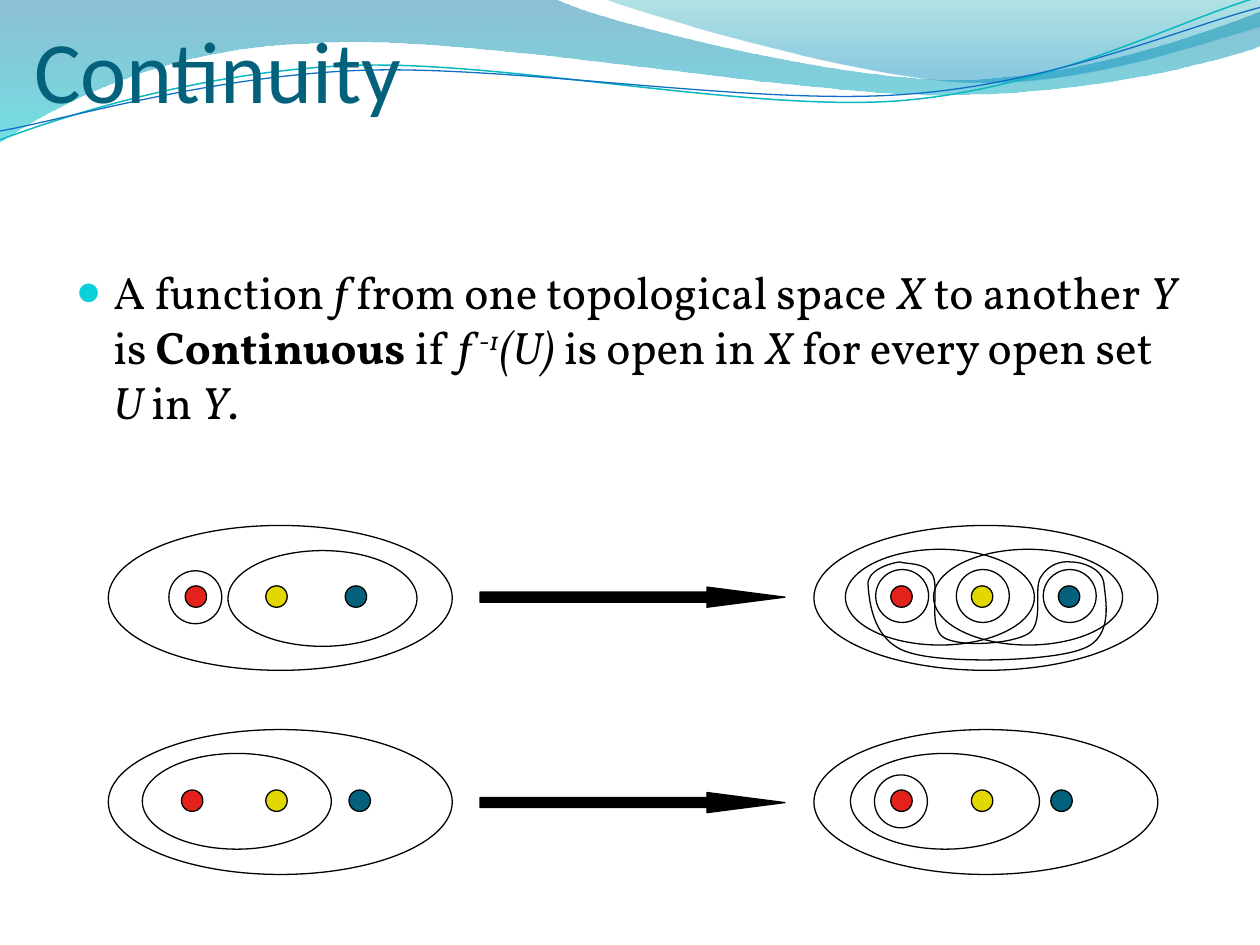
import math
from lxml import etree
from pptx import Presentation
from pptx import util as u
from pptx.dml.color import RGBColor
from pptx.enum import shapes, text
from pptx.oxml.ns import qn

C = {"black": "000000", "title": "04617B", "bullet": "0BD0D9",
     "red": "E3231B", "yellow": "E2D700", "blue": "04617B",
     "cyan_line": "0AB8BF", "blue_line": "0F6FC6",
     "wave_top": "0074A1", "wave_end": "00C6CF",
     "crest_top": "00A1A9", "crest_end": "008BBF"}


def style(sp, fill=None, line="black", width=0.75):
    sp.shadow.inherit = False
    if fill:
        sp.fill.solid()
        sp.fill.fore_color.rgb = RGBColor.from_string(C[fill])
    else:
        sp.fill.background()
    if line:
        sp.line.color.rgb = RGBColor.from_string(C[line])
        sp.line.width = u.Pt(width)
    else:
        sp.line.fill.background()


def curve(parent, points, kinds, close):
    pts = [(u.Inches(x), u.Inches(y)) for x, y in points]
    fb = parent.build_freeform(*pts[0])
    fb.add_line_segments(pts[1:], close=close)
    sp = fb.convert_to_shape()
    lines = iter(list(sp.element.spPr.iter(qn("a:lnTo"))))
    for kind in kinds:
        first = next(lines)
        if kind == "C":
            bez = etree.Element(qn("a:cubicBezTo"))
            first.addprevious(bez)
            for ln in (first, next(lines), next(lines)):
                bez.append(ln[0])
                ln.getparent().remove(ln)
    return sp


prs = Presentation()
prs.slide_width, prs.slide_height = u.Inches(10), u.Inches(7.5)
s = prs.slides.add_slide(prs.slide_layouts[1])

waves = [
    ([(0, 0), (4.4, -0.01), (4.76, 0.17), (6.64, 0.63), (7.58, 0.63),
      (8.53, 0.63), (9.58, 0.26), (10, 0.09), (10.01, 0.36),
      (9.83, 0.44), (8.7, 0.76), (7.46, 0.75), (6.22, 0.75), (3.82, 0.28),
      (2.57, 0.34), (1.29, 0.36), (0.46, 0.83), (-0.01, 1.13)], "LCCLCCC",
     [(0, "wave_top", 45), (1, "wave_end", 55)]),
    ([(4.79, -0.01), (5.09, 0.11), (6.82, 0.62), (7.69, 0.65),
      (8.56, 0.69), (9.61, 0.32), (10, 0.21), (10, 0)], "CCL",
     [(0, "crest_top", 30), (0.8, "crest_end", 45)]),
]
for points, kinds, stops in waves:
    sp = curve(s.shapes, points, kinds, True)
    style(sp, line=None)
    sp.fill.gradient()
    sp.fill.gradient_angle = 270
    for stop, (pos, color, _) in zip(sp.fill.gradient_stops, stops):
        stop.position = pos
        stop.color.rgb = RGBColor.from_string(C[color])
    for clr, (_, _, alpha) in zip(sp.element.spPr.iter(qn("a:srgbClr")), stops):
        etree.SubElement(clr, qn("a:alpha"), val=str(alpha * 1000))

ripples = [
    ([(0, 1.11), (0.48, 0.93), (1.58, 0.57), (2.77, 0.52), (3.95, 0.47),
      (5.93, 0.89), (7.13, 0.8), (8.33, 0.71), (9.38, 0.15), (9.98, -0.02)],
     (4.99, 0.57), "cyan_line", 0.85),
    ([(0, 1.04), (0.47, 0.96), (1.64, 0.61), (2.83, 0.56), (4.03, 0.51),
      (5.97, 0.84), (7.17, 0.75), (8.36, 0.67), (9.41, 0.21), (10, 0.06)],
     (5, 0.59), "blue_line", 0.75),
]
tilt = math.radians(2.7)
ripple_group = s.shapes.add_group_shape()
for points, (cx, cy), color, width in ripples:
    level = [(cx + (x - cx) * math.cos(tilt) - (y - cy) * math.sin(tilt),
              cy + (x - cx) * math.sin(tilt) + (y - cy) * math.cos(tilt))
             for x, y in points]
    sp = curve(ripple_group.shapes, level, "CCC", False)
    sp.rotation = 357.3
    style(sp, line=color, width=width)

title, body = s.shapes.title, s.placeholders[1]
frames = [(title, (0.17, 0.08, 9.75, 1.17)), (body, (0.5, 2.05, 9, 1.87))]
for sp, box in frames:
    sp.left, sp.top, sp.width, sp.height = [u.Inches(v) for v in box]
    sp.element.getparent().append(sp.element)
    tf = sp.text_frame
    tf.word_wrap = True
    tf.auto_size = text.MSO_AUTO_SIZE.NONE
    tf.vertical_anchor = text.MSO_ANCHOR.TOP
    tf.margin_top = u.Inches(0.04)
    tf.paragraphs[0].alignment = text.PP_ALIGN.LEFT

title.text_frame.margin_top = u.Inches(0.05)
r = title.text_frame.paragraphs[0].add_run()
r.text = "Continuity"
r.font.name, r.font.size = "Calibri", u.Pt(50)
r.font.color.rgb = RGBColor.from_string(C["title"])

p = body.text_frame.paragraphs[0]
p.space_before = u.Pt(5.2)
p.line_spacing = u.Pt(31.4)
pPr = p._p.get_or_add_pPr()
pPr.set("marL", str(u.Inches(0.3)))
pPr.set("indent", str(u.Inches(-0.3)))
bu = etree.SubElement(pPr, qn("a:buClr"))
etree.SubElement(bu, qn("a:srgbClr"), val=C["bullet"])
etree.SubElement(pPr, qn("a:buSzPct"), val="95000")
etree.SubElement(pPr, qn("a:buChar"), char="●")

runs = [("A function ", ""), ("f", "i"), (" from one topological space ", ""),
        ("X", "i"), (" to another ", ""), ("Y", "i"), (" is ", ""),
        ("Continuous", "b"), (" if ", ""), ("f ", "i"), ("-1", "i^"),
        ("(U)", "i"), (" is open in ", ""), ("X", "i"),
        (" for every open set ", ""), ("U", "i"), (" in ", ""),
        ("Y", "i"), (".", "")]
for words, marks in runs:
    r = p.add_run()
    r.text = words
    r.font.name, r.font.size = "Vollkorn", u.Pt(26)
    r.font.color.rgb = RGBColor.from_string(C["black"])
    r.font.italic, r.font.bold = "i" in marks, "b" in marks
    if "^" in marks:
        r.font._element.set("baseline", "30000")

DOT, RING, SUBSET, SPACE = (0.17, 0.17), (0.42, 0.42), (1.5, 0.76), (2.73, 1.15)
red_blue_set = [
    (7.14, 4.46), (7.06, 4.47), (6.87, 4.53), (6.89, 4.65), (6.9, 4.78),
    (6.93, 5.1), (7.22, 5.18), (7.5, 5.27), (8.34, 5.25), (8.59, 5.15),
    (8.85, 5.06), (8.77, 4.74), (8.76, 4.62), (8.74, 4.51), (8.59, 4.46),
    (8.5, 4.46), (8.42, 4.45), (8.32, 4.48), (8.26, 4.58), (8.2, 4.67),
    (8.29, 4.95), (8.16, 5.03), (8.03, 5.11), (7.62, 5.14), (7.49, 5.06),
    (7.36, 4.98), (7.46, 4.66), (7.4, 4.56), (7.34, 4.46), (7.2, 4.48), (7.14, 4.46)]
spaces = [
    (6.46, 4.17, (7.07, 7.71, 8.4), (6.71, 7.41), 4.36, (7.59, 8.28, 6.95), 4.52, red_blue_set),
    (0.86, 4.17, (1.47, 2.11, 2.74), (1.81,), 4.37, (1.34,), 4.53, None),
    (6.46, 5.79, (7.07, 7.71, 8.34), (6.75,), 5.98, (6.94,), 6.15, None),
    (0.86, 5.79, (1.44, 2.11, 2.77), (1.13,), 5.98, (), 0, None),
]
for left, top, dots, subsets, subset_top, rings, ring_top, outline in spaces:
    group = s.shapes.add_group_shape()
    ovals = [(x, top + 0.48, DOT, c) for x, c in zip(dots, ("red", "yellow", "blue"))]
    ovals.append((left, top, SPACE, None))
    ovals += [(x, subset_top, SUBSET, None) for x in subsets]
    ovals += [(x, ring_top, RING, None) for x in rings]
    for x, y, (w, h), fill in ovals:
        sp = group.shapes.add_shape(shapes.MSO_SHAPE.OVAL, u.Inches(x), u.Inches(y),
                                    u.Inches(w), u.Inches(h))
        style(sp, fill)
    if outline:
        style(curve(group.shapes, outline, "C" * 10, True))

for y in (4.66, 6.29):
    sp = s.shapes.add_shape(shapes.MSO_SHAPE.RIGHT_ARROW, u.Inches(3.81), u.Inches(y),
                            u.Inches(2.42), u.Inches(0.16))
    sp.adjustments[0], sp.adjustments[1] = 0.5, 3.87
    style(sp, "black")

prs.save("out.pptx")
